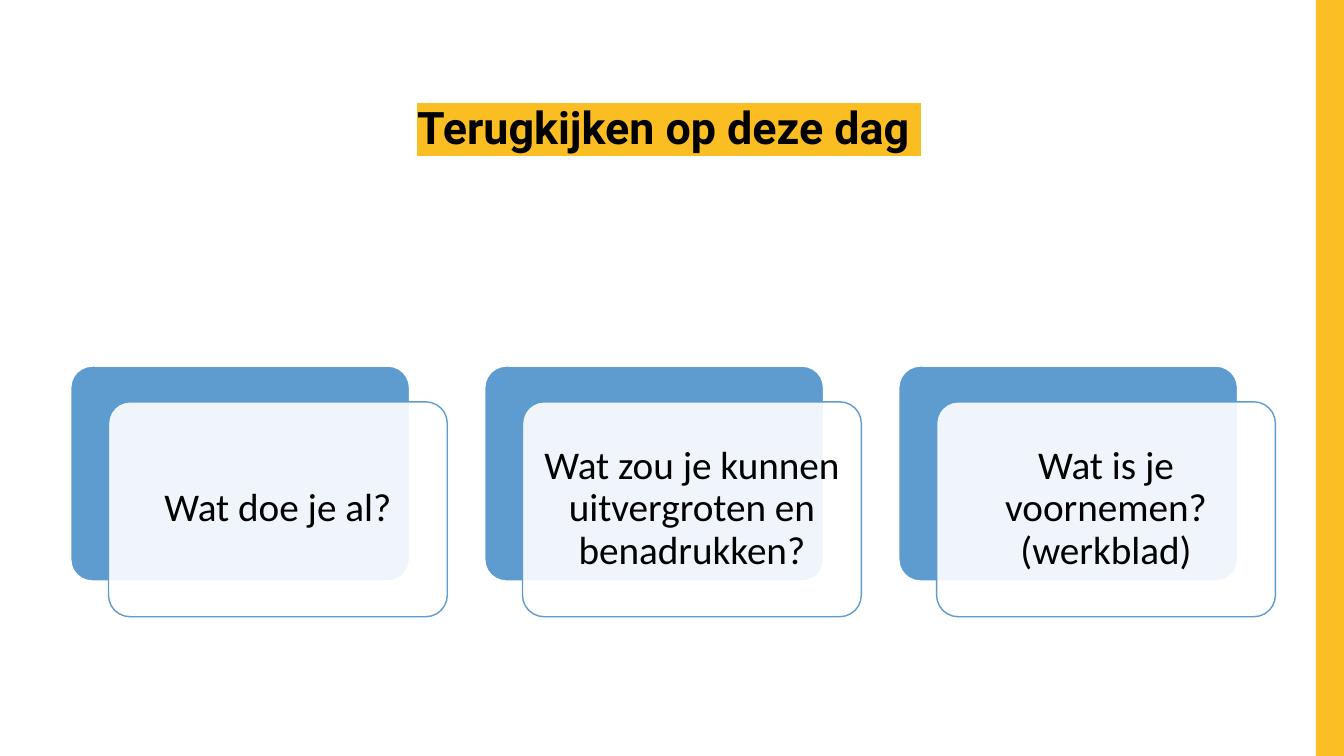
from lxml import etree
from pptx import Presentation
from pptx.dml.color import RGBColor
from pptx.enum import shapes, text
from pptx.oxml import ns
from pptx.util import Pt

YELLOW = RGBColor(0xFB, 0xBF, 0x24)
HIGHLIGHT = RGBColor(0xFB, 0xBE, 0x22)
BLUE = RGBColor(0x5E, 0x9B, 0xCF)
WHITE = RGBColor(0xFF, 0xFF, 0xFF)
BLACK = RGBColor(0x00, 0x00, 0x00)

QUESTIONS = [
    "Wat doe je al?",
    "Wat zou je kunnen uitvergroten en benadrukken?",
    "Wat is je voornemen? (werkblad)",
]
CARD_LEFT, CARD_TOP = 50.5, 261.5
CARD_WIDTH, CARD_HEIGHT = 242, 153.5
CARD_PITCH = 295.75
OFFSET_X, OFFSET_Y = 27, 25.5


def set_attributes(target, values):
    for name, value in values.items():
        setattr(target, name, value)


def add_block(slide, kind, box, fill, line=None):
    shape = slide.shapes.add_shape(kind, *map(Pt, box))
    shape.shadow.inherit = False
    shape.fill.solid()
    shape.fill.fore_color.rgb = fill
    if line is None:
        shape.line.fill.background()
    else:
        shape.line.color.rgb = line
        shape.line.width = Pt(1)
    return shape


def add_rounded(slide, left, top, fill, line):
    box = (left, top, CARD_WIDTH, CARD_HEIGHT)
    shape = add_block(slide, shapes.MSO_SHAPE.ROUNDED_RECTANGLE, box, fill, line)
    shape.adjustments[0] = 0.1
    return shape


def set_opacity(shape, percent):
    color = shape.fill._xPr.find(".//" + ns.qn("a:srgbClr"))
    etree.SubElement(color, ns.qn("a:alpha"), val=str(percent * 1000))


def write_text(shape, content, inset, **font_values):
    frame = shape.text_frame
    set_attributes(frame, {
        "word_wrap": True,
        "vertical_anchor": text.MSO_ANCHOR.MIDDLE,
        **{f"margin_{side}": Pt(inset) for side in ("left", "top", "right", "bottom")},
    })
    paragraph = frame.paragraphs[0]
    set_attributes(paragraph, {"alignment": text.PP_ALIGN.CENTER, "line_spacing": 0.9})
    run = paragraph.add_run()
    run.text = content
    run.font.color.rgb = BLACK
    set_attributes(run.font, font_values)
    return run


def highlight(run, color):
    fill = run.font._element.find(ns.qn("a:solidFill"))
    marker = etree.Element(ns.qn("a:highlight"))
    etree.SubElement(marker, ns.qn("a:srgbClr"), val=str(color))
    fill.addnext(marker)


def add_title(slide, content):
    shape = slide.shapes.add_textbox(Pt(98), Pt(53.5), Pt(760), Pt(79))
    run = write_text(shape, content, 3.6, name="Roboto", size=Pt(32), bold=True)
    highlight(run, HIGHLIGHT)


def add_question(slide, left, question):
    add_rounded(slide, left, CARD_TOP, BLUE, WHITE)
    card = add_rounded(slide, left + OFFSET_X, CARD_TOP + OFFSET_Y, WHITE, BLUE)
    set_opacity(card, 90)
    write_text(card, question, 8.4, name="Calibri", size=Pt(28))


def main():
    presentation = Presentation()
    set_attributes(presentation, {"slide_width": Pt(960), "slide_height": Pt(540)})
    slide = presentation.slides.add_slide(presentation.slide_layouts[6])
    add_block(slide, shapes.MSO_SHAPE.RECTANGLE, (940, 0, 20, 540), YELLOW)
    for index, question in enumerate(QUESTIONS):
        add_question(slide, CARD_LEFT + index * CARD_PITCH, question)
    add_title(slide, "Terugkijken op deze dag ")
    presentation.save("out.pptx")


if __name__ == "__main__":
    main()
